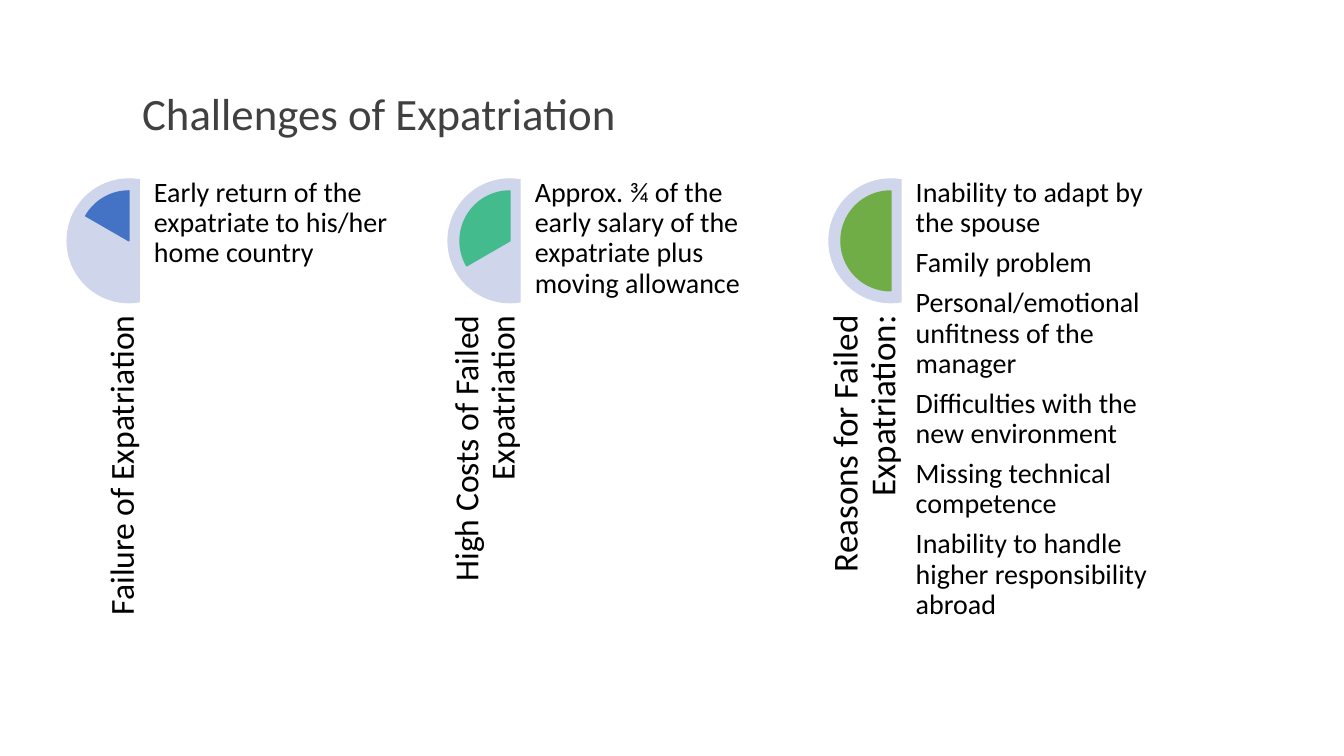
from pptx import Presentation, util as u
from pptx.dml import color
from pptx.enum import shapes, text

Pt = u.Pt
COLORS = {"title": "404041", "text": "000000", "backdrop": "CFD5EA",
          "blue": "4472C4", "teal": "43BB8D", "green": "70AD47"}

# Label, label size, wedge colour, wedge start angle, body paragraphs
CHALLENGES = [
    ("Failure of Expatriation", 24, "blue", 126,
     ["Early return of the expatriate to his/her home country"]),
    ("High Costs of Failed Expatriation", 24, "teal", 90,
     ["Approx. ¾ of the early salary of the expatriate plus moving allowance"]),
    ("Reasons for Failed Expatriation:", 25, "green", 54,
     ["Inability to adapt by the spouse",
      "Family problem",
      "Personal/emotional unfitness of the manager",
      "Difficulties with the new environment",
      "Missing technical competence",
      "Inability to handle higher responsibility abroad"]),
]
LEFT, TOP, PITCH = 47.5, 127.4, 272.1
CHORD_SIZE, PIE_SIZE = 89.3, 71.3
PIE_INSET = (CHORD_SIZE - PIE_SIZE) / 2


def add_dial(kind, left, top, size, angles, fill):
    """Add a filled circle segment between two angles, without an outline."""
    dial = slide.shapes.add_shape(kind, Pt(left), Pt(top), Pt(size), Pt(size))
    dial.shadow.inherit = False
    dial.adjustments[0], dial.adjustments[1] = angles
    dial.fill.solid()
    dial.fill.fore_color.rgb = color.RGBColor.from_string(COLORS[fill])
    dial.line.fill.background()
    return dial


def fill_text(shape, lines, size, fill, frame_format, paragraph_format):
    frame = shape.text_frame
    for name, value in frame_format.items():
        setattr(frame, name, value)
    frame.text = "\n".join(lines)
    for paragraph in frame.paragraphs:
        paragraph.line_spacing = 0.9
        for name, value in paragraph_format.items():
            setattr(paragraph, name, value)
        paragraph.font.name = "Calibri"
        paragraph.font.size = Pt(size)
        paragraph.font.color.rgb = color.RGBColor.from_string(COLORS[fill])


presentation = Presentation()
presentation.slide_width, presentation.slide_height = Pt(960), Pt(540)
slide = presentation.slides.add_slide(presentation.slide_layouts[5])

title = slide.shapes.title
title.left, title.top, title.width, title.height = Pt(94.3), Pt(41), Pt(671.8), Pt(84.2)
fill_text(title, ["Challenges of Expatriation"], 32, "title",
          {"vertical_anchor": text.MSO_ANCHOR.MIDDLE, "auto_size": text.MSO_AUTO_SIZE.NONE},
          {"alignment": text.PP_ALIGN.LEFT})

tight = {"word_wrap": True, "margin_left": 0, "margin_right": 0,
         "margin_top": 0, "margin_bottom": 0}

for column, (label, label_size, accent, start, lines) in enumerate(CHALLENGES):
    left = LEFT + column * PITCH
    add_dial(shapes.MSO_SHAPE.CHORD, left, TOP, CHORD_SIZE, (48, 168), "backdrop")
    wedge = add_dial(shapes.MSO_SHAPE.PIE, left + PIE_INSET, TOP + PIE_INSET,
                     PIE_SIZE, (start, 162), accent)
    wedge.line.color.rgb = color.RGBColor.from_string(COLORS[accent])
    wedge.line.width = Pt(1)

    heading = slide.shapes.add_textbox(Pt(left - 103), Pt(328.3), Pt(259.2), Pt(53.3))
    heading.rotation = 270
    fill_text(heading, [label], label_size, "text",
              {**tight, "vertical_anchor": text.MSO_ANCHOR.BOTTOM},
              {"alignment": text.PP_ALIGN.RIGHT})

    body = slide.shapes.add_textbox(Pt(left + 62.4), Pt(TOP), Pt(178.6), Pt(357.1))
    fill_text(body, lines, 20, "text", tight, {"space_after": Pt(7)})

presentation.save("out.pptx")
